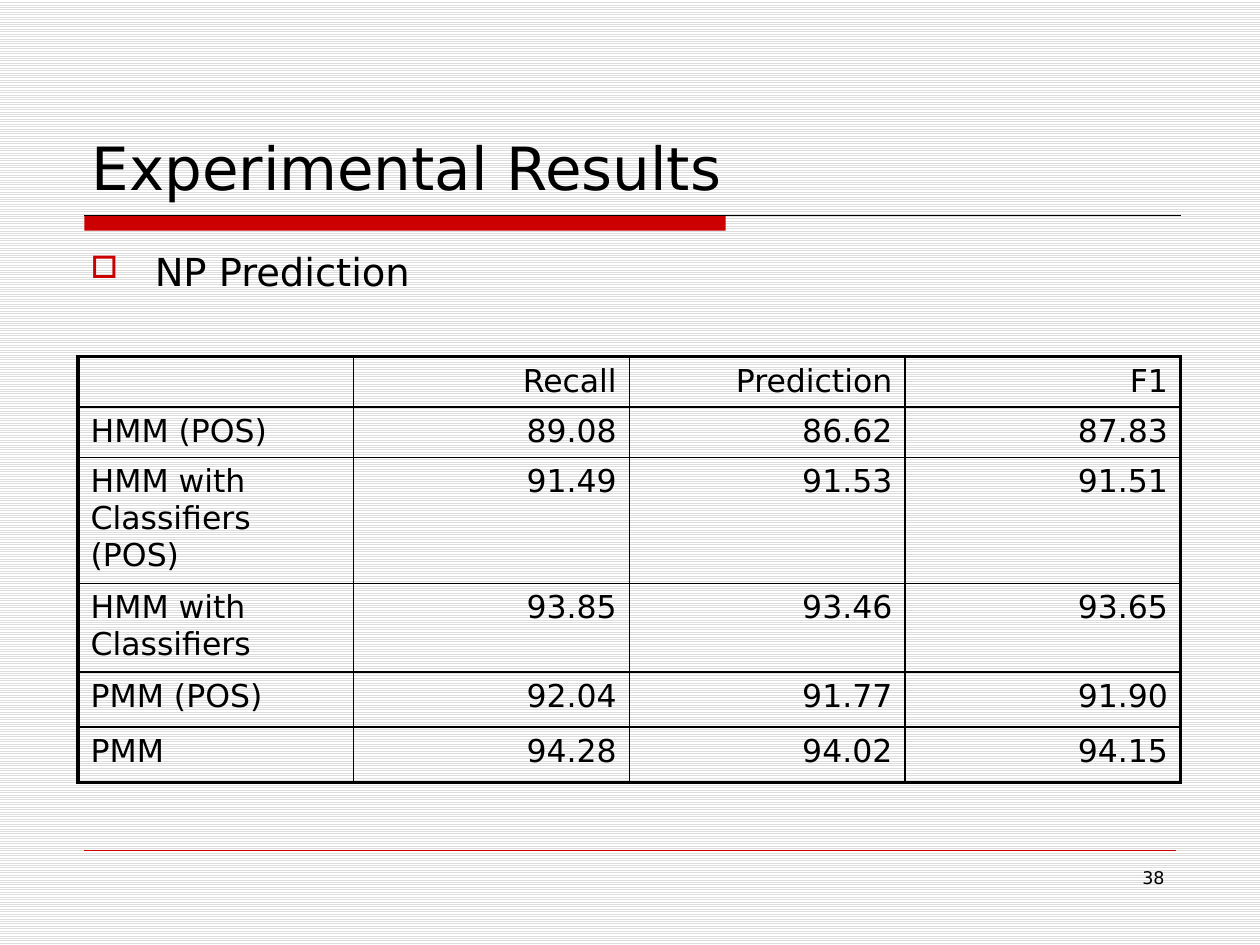
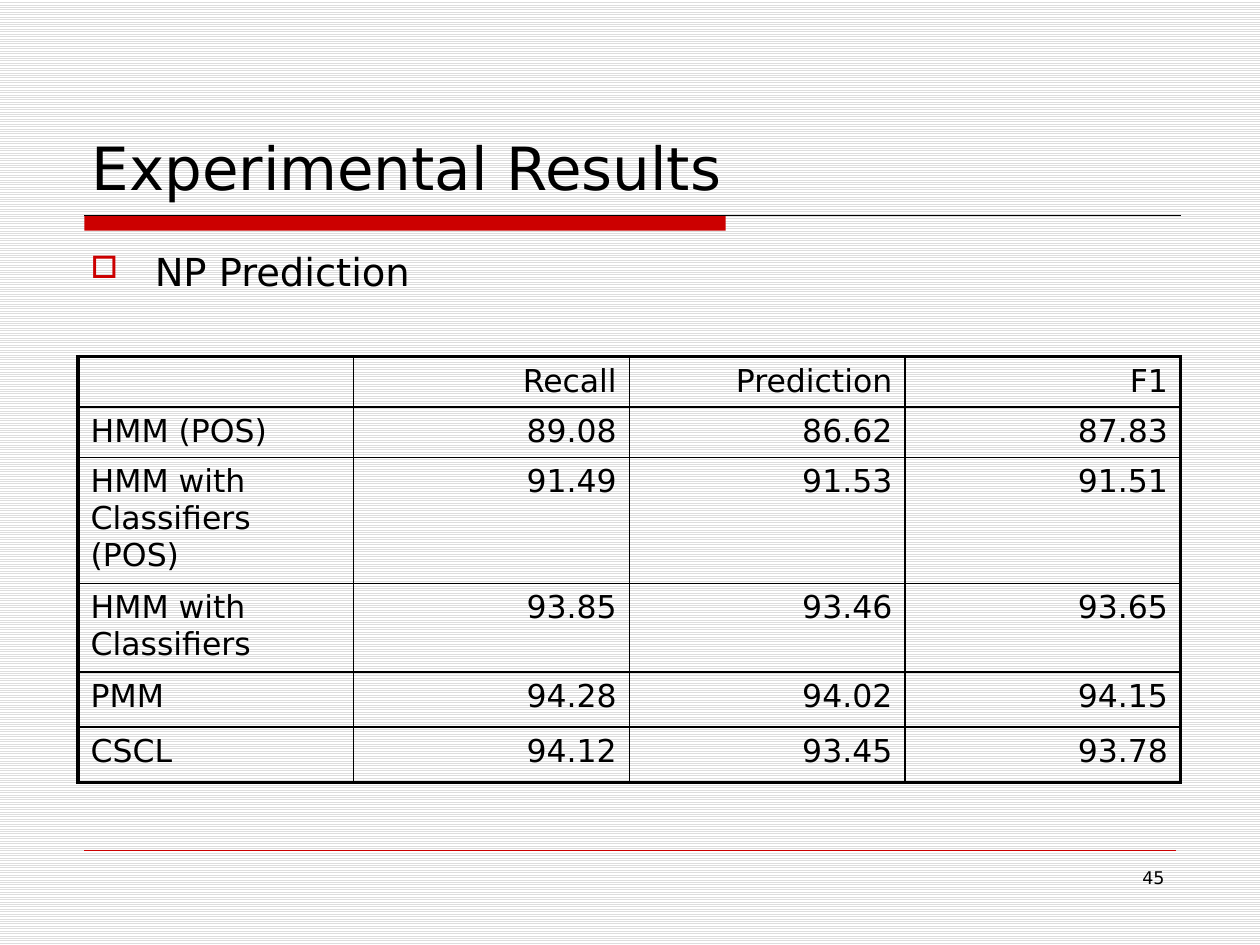
from lxml.etree import SubElement
from pptx import Presentation
from pptx.dml.color import RGBColor
from pptx.enum.dml import MSO_PATTERN
from pptx.enum.shapes import MSO_CONNECTOR, MSO_SHAPE
from pptx.enum.text import MSO_ANCHOR, PP_ALIGN
from pptx.oxml.ns import qn
from pptx.util import Inches, Pt

# Shared look
FONT = "DejaVu Sans"
BLACK, RED, WHITE, STRIPE = "000000", "CC0000", "FFFFFF", "DDDDDD"
THIN, THICK = 1, 2.25

# Table content
HEADER = ("", "Recall", "Prediction", "F1")
HMM_ROWS = [
    ("HMM (POS)", "89.08", "86.62", "87.83"),
    ("HMM with Classifiers (POS)", "91.49", "91.53", "91.51"),
    ("HMM with Classifiers", "93.85", "93.46", "93.65"),
]
PMM_POS = ("PMM (POS)", "92.04", "91.77", "91.90")
PMM = ("PMM", "94.28", "94.02", "94.15")
CSCL = ("CSCL", "94.12", "93.45", "93.78")
ROW_HEIGHTS = (0.39, 0.39, 0.97, 0.68, 0.44, 0.44)
TABLE_WIDTH = 8.75


def color(hex_code):
    return RGBColor.from_string(hex_code)


def style_paragraph(paragraph, size, align=PP_ALIGN.LEFT):
    paragraph.alignment = align
    paragraph.font.name = FONT
    paragraph.font.size = Pt(size)
    paragraph.font.color.rgb = color(BLACK)


def add_text(slide, text, box, size, align=PP_ALIGN.LEFT,
             anchor=MSO_ANCHOR.TOP, bullet=False):
    shape = slide.shapes.add_textbox(*map(Inches, box))
    frame = shape.text_frame
    frame.word_wrap = True
    frame.vertical_anchor = anchor
    paragraph = frame.paragraphs[0]
    paragraph.text = text
    if bullet:
        add_bullet(paragraph)
    style_paragraph(paragraph, size, align)


def add_bullet(paragraph):
    properties = paragraph._p.get_or_add_pPr()
    properties.set("marL", str(Inches(0.51)))
    properties.set("indent", str(Inches(-0.51)))
    bullet_color = SubElement(properties, qn("a:buClr"))
    SubElement(bullet_color, qn("a:srgbClr"), val=RED)
    SubElement(properties, qn("a:buSzPct"), val="80000")
    SubElement(properties, qn("a:buChar"), char="□")


def add_rule(slide, left, right, top, line_color, width):
    line = slide.shapes.add_connector(
        MSO_CONNECTOR.STRAIGHT, Inches(left), Inches(top), Inches(right), Inches(top))
    line.line.color.rgb = color(line_color)
    line.line.width = Pt(width)
    SubElement(line._element.spPr, qn("a:effectLst"))


def add_title_band(slide):
    band = slide.shapes.add_shape(
        MSO_SHAPE.RECTANGLE, Inches(0.67), Inches(1.71), Inches(5.09), Inches(0.12))
    band.shadow.inherit = False
    band.fill.solid()
    band.fill.fore_color.rgb = color(RED)
    band.line.fill.background()
    add_rule(slide, 0.67, 9.37, 1.71, BLACK, 0.75)


def set_borders(cell, widths):
    properties = cell._tc.get_or_add_tcPr()
    for side, width in zip("LRTB", widths):
        line = SubElement(properties, qn(f"a:ln{side}"), w=str(Pt(width)))
        fill = SubElement(line, qn("a:solidFill"))
        SubElement(fill, qn("a:srgbClr"), val=BLACK)


def add_results_table(slide, rows):
    row_count, column_count = len(rows), len(HEADER)
    table = slide.shapes.add_table(
        row_count, column_count, Inches(0.62), Inches(2.83),
        Inches(TABLE_WIDTH), Inches(sum(ROW_HEIGHTS))).table
    table.first_row = table.horz_banding = False
    for column in table.columns:
        column.width = Inches(TABLE_WIDTH / column_count)
    for i, (row, height) in enumerate(zip(rows, ROW_HEIGHTS)):
        table.rows[i].height = Inches(height)
        for j, text in enumerate(row):
            cell = table.cell(i, j)
            cell.text = text
            style_paragraph(cell.text_frame.paragraphs[0], 18,
                            PP_ALIGN.RIGHT if j else PP_ALIGN.LEFT)
            # Thick frame around the table, thin lines inside
            on_edge = (j == 0, j == column_count - 1, i == 0, i == row_count - 1)
            set_borders(cell, [THICK if edge else THIN for edge in on_edge])
            cell.fill.background()


def add_results_slide(presentation, number, rows):
    slide = presentation.slides.add_slide(presentation.slide_layouts[6])
    background = slide.background.fill
    background.patterned()
    background.pattern = MSO_PATTERN.LIGHT_HORIZONTAL
    background.fore_color.rgb = color(STRIPE)
    background.back_color.rgb = color(WHITE)

    # Band and footer
    add_title_band(slide)
    add_rule(slide, 0.67, 9.33, 6.75, RED, 0.25)
    add_text(slide, number, (7.17, 6.83, 2.17, 0.52), 10, PP_ALIGN.RIGHT)

    # Title, topic and results
    add_text(slide, "Experimental Results", (0.63, 0.33, 8.75, 1.33), 34,
             anchor=MSO_ANCHOR.BOTTOM)
    add_text(slide, "NP Prediction", (0.62, 1.92, 8.75, 2.25), 22, bullet=True)
    add_results_table(slide, [HEADER, *HMM_ROWS, *rows])


def main():
    presentation = Presentation()
    presentation.slide_width = Inches(10)
    presentation.slide_height = Inches(7.5)
    add_results_slide(presentation, "38", [PMM_POS, PMM])
    add_results_slide(presentation, "45", [PMM, CSCL])
    presentation.save("out.pptx")


if __name__ == "__main__":
    main()
